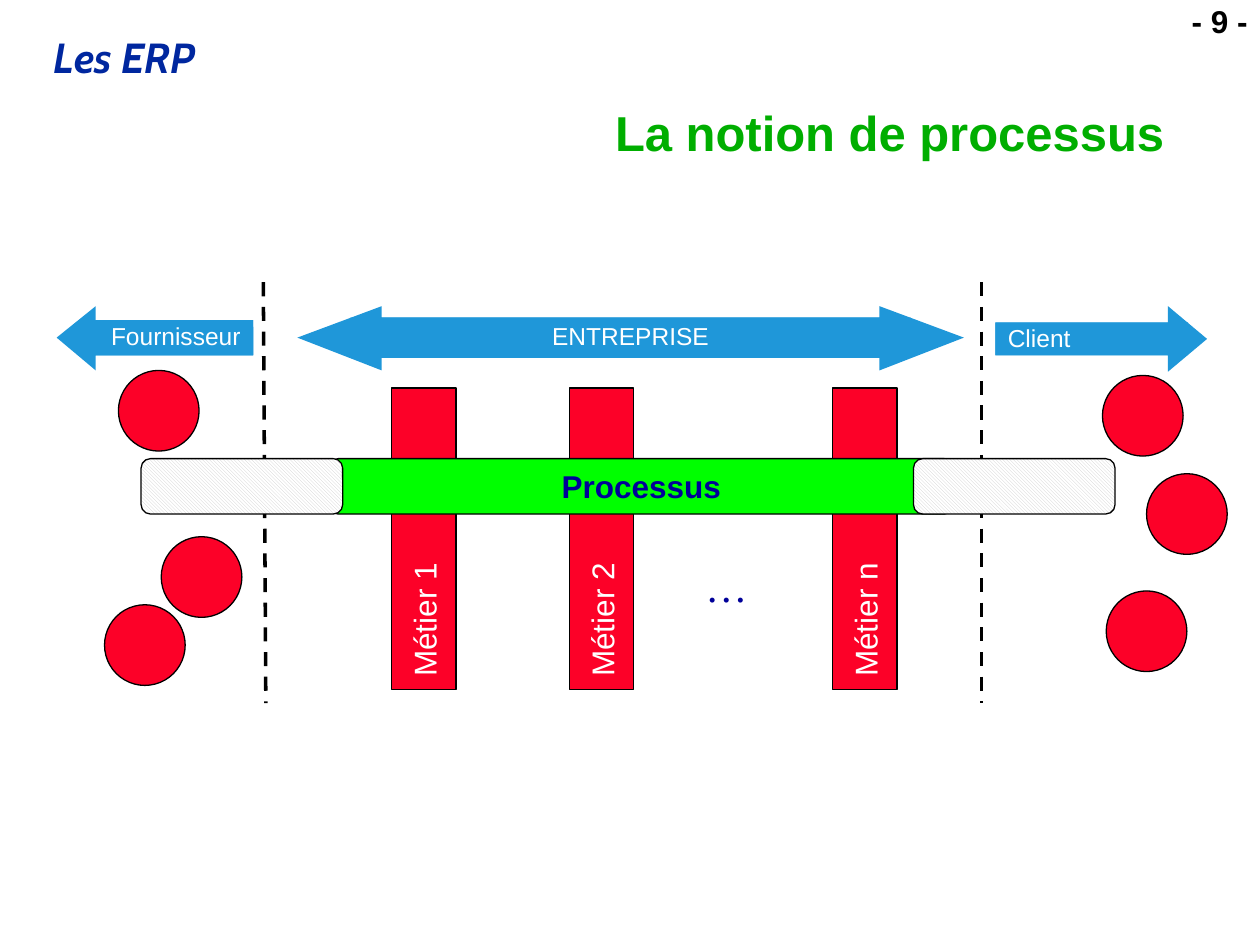
"""Build the slide on the notion of process in an ERP course."""
from lxml.etree import SubElement
from pptx import Presentation
from pptx.dml.color import RGBColor
from pptx.enum.dml import MSO_LINE, MSO_PATTERN
from pptx.enum.shapes import MSO_CONNECTOR, MSO_SHAPE as SHAPE
from pptx.enum.text import MSO_ANCHOR as ANCHOR, MSO_AUTO_SIZE as AUTO, PP_ALIGN as ALIGN
from pptx.oxml.ns import qn
from pptx.util import Inches, Pt

BLACK = RGBColor(0x00, 0x00, 0x00)
WHITE = RGBColor(0xFF, 0xFF, 0xFF)
RED = RGBColor(0xFC, 0x01, 0x28)
SKY = RGBColor(0x1F, 0x97, 0xD9)
LIME = RGBColor(0x00, 0xFF, 0x00)
GREEN = RGBColor(0x00, 0xAE, 0x00)
BLUE = RGBColor(0x00, 0x27, 0x9F)
NAVY = RGBColor(0x00, 0x00, 0x99)
GREY = RGBColor(0xCE, 0xCE, 0xCE)


def write(box, text, color, size, align=ALIGN.LEFT, anchor=ANCHOR.MIDDLE,
          wrap=True, spacing=None, before=None, **font):
    frame = box.text_frame
    frame.word_wrap = wrap
    frame.vertical_anchor = anchor
    para = frame.paragraphs[0]
    layout = {"alignment": align, "line_spacing": spacing, "space_before": before}
    for name, value in layout.items():
        setattr(para, name, value)
    span = para.add_run()
    span.text = text
    span.font.color.rgb = color
    for name, value in ({"name": "Arial", "size": Pt(size)} | font).items():
        setattr(span.font, name, value)


def draw(kind, place, fill, corner=None, outline=True):
    shape = page.shapes.add_shape(kind, *map(Inches, place))
    shape.shadow.inherit = False
    if corner is not None:
        shape.adjustments[0] = corner
    shape.fill.solid()
    shape.fill.fore_color.rgb = fill
    if outline:
        shape.line.color.rgb = BLACK
        shape.line.width = Pt(0.75)
    else:
        shape.line.fill.background()
    return shape


deck = Presentation()
deck.slide_width, deck.slide_height = Inches(10), Inches(7.5)
page = deck.slides.add_slide(deck.slide_layouts[5])

title = page.shapes.title
title.left, title.top, title.width, title.height = map(Inches, (1.42, 0.83, 7.92, 0.5))
write(title, "La notion de processus", GREEN, 28, ALIGN.RIGHT, spacing=0.9, bold=True)
title.text_frame.auto_size = AUTO.NONE

captions = [
    ((0.33, 0.25, 8.08, 0.46), "Les ERP", BLUE, 24,
     {"spacing": 0.9, "name": "Cabin", "bold": True, "italic": True}),
    ((9.09, 0, 0.91, 0.37), " - 9 -", BLACK, 18,
     {"spacing": 0.9, "align": ALIGN.RIGHT, "bold": True}),
    ((5.5, 4.4, 0.53, 0.5), "…", NAVY, 24, {"wrap": False, "name": "Times New Roman"}),
]
for place, text, color, size, style in captions:
    box = page.shapes.add_textbox(*map(Inches, place))
    write(box, text, color, size, anchor=ANCHOR.TOP, **style)
    box.text_frame.auto_size = AUTO.SHAPE_TO_FIT_TEXT

for top_x, bottom_x in [(2.09, 2.11), (7.79, 7.79)]:
    border = page.shapes.add_connector(
        MSO_CONNECTOR.STRAIGHT, *map(Inches, (top_x, 2.24, bottom_x, 5.58)))
    border.line.color.rgb = BLACK
    border.line.width = Pt(2)
    border.line.dash_style = MSO_LINE.DASH
    SubElement(border.line._get_or_add_ln().getparent(), qn("a:effectLst"))

arrows = [
    ("Fournisseur", ALIGN.RIGHT, (0.62, 2.54, 1.39, 0.28),
     [(2.01, 2.54), (0.76, 2.54), (0.76, 2.43), (0.45, 2.68), (0.76, 2.94),
      (0.76, 2.82), (2.01, 2.82)]),
    ("ENTREPRISE", ALIGN.CENTER, (2.78, 2.52, 4.45, 0.32),
     [(2.36, 2.68), (3.03, 2.43), (3.03, 2.52), (6.98, 2.52), (6.98, 2.43),
      (7.65, 2.68), (6.98, 2.94), (6.98, 2.84), (3.03, 2.84), (3.03, 2.94)]),
    ("Client", ALIGN.LEFT, (7.9, 2.56, 1.53, 0.26),
     [(7.9, 2.56), (9.27, 2.56), (9.27, 2.43), (9.58, 2.69), (9.27, 2.95),
      (9.27, 2.82), (7.9, 2.82)]),
]
for text, align, place, corners in arrows:
    start, *others = [(Inches(x), Inches(y)) for x, y in corners]
    builder = page.shapes.build_freeform(*start)
    builder.add_line_segments(others)
    arrow = builder.convert_to_shape()
    arrow.shadow.inherit = False
    arrow.fill.solid()
    arrow.fill.fore_color.rgb = SKY
    arrow.line.fill.background()
    label = draw(SHAPE.ROUNDED_RECTANGLE, place, SKY, 0.01, outline=False)
    write(label, text, WHITE, 14, align, spacing=0.93, before=Pt(8.8))

for text, left in [("Métier 1", 2.17), ("Métier 2", 3.58), ("Métier n", 5.67)]:
    column = draw(SHAPE.RECTANGLE, (left, 4.02, 2.39, 0.51), RED)
    column.rotation = 270
    write(column, text, WHITE, 18, wrap=False)

process = draw(SHAPE.ROUNDED_RECTANGLE, (2.61, 3.64, 4.96, 0.44), LIME, 0.17)
write(process, "Processus", NAVY, 18, ALIGN.CENTER, wrap=False, bold=True)

for left, top in [(0.94, 2.94), (1.28, 4.26), (0.83, 4.8),
                  (8.75, 2.98), (9.1, 3.76), (8.78, 4.69)]:
    draw(SHAPE.OVAL, (left, top, 0.64, 0.64), RED)

for left in (1.12, 7.25):
    extension = draw(SHAPE.ROUNDED_RECTANGLE, (left, 3.64, 1.6, 0.44), WHITE, 0.17)
    extension.fill.patterned()
    extension.fill.pattern = MSO_PATTERN.LIGHT_DOWNWARD_DIAGONAL
    extension.fill.fore_color.rgb = GREY
    extension.fill.back_color.rgb = WHITE

deck.save("out.pptx")
